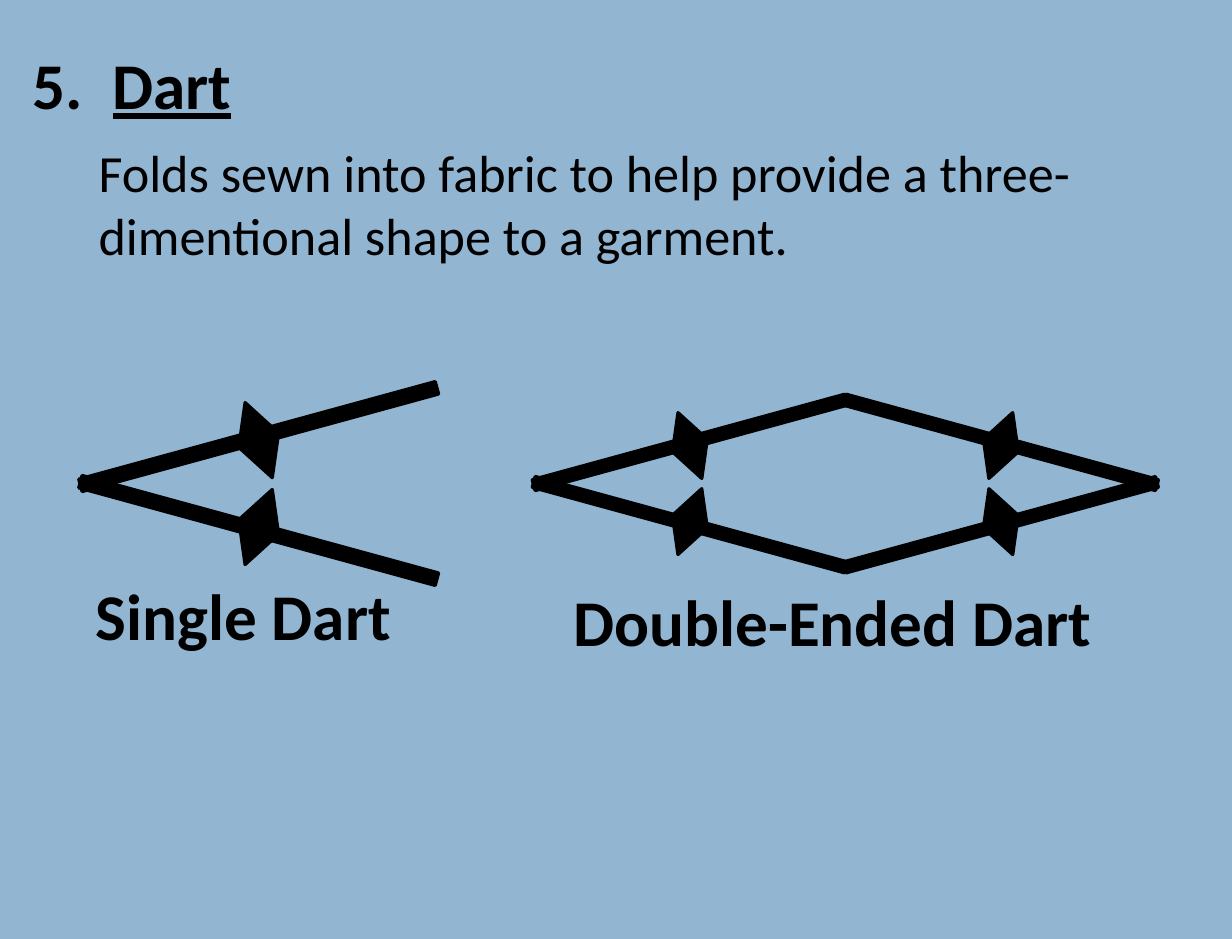
import dataclasses

import pptx
import pptx.dml.color
import pptx.enum.shapes
import pptx.enum.text
import pptx.util

Inches = pptx.util.Inches
SHAPES = pptx.enum.shapes.MSO_SHAPE


@dataclasses.dataclass(frozen=True)
class Theme:
    background = pptx.dml.color.RGBColor(0x92, 0xB5, 0xD2)
    ink = pptx.dml.color.RGBColor(0, 0, 0)
    font = "Calibri"
    heading_size = pptx.util.Pt(40)
    body_size = pptx.util.Pt(32)
    outline = pptx.util.Pt(2)


@dataclasses.dataclass(frozen=True)
class Box:
    left: float
    top: float
    width: float
    height: float

    @property
    def center(self):
        return self.left + self.width / 2, self.top + self.height / 2


THEME = Theme()


def place(shape, box):
    shape.left, shape.top = Inches(box.left), Inches(box.top)
    shape.width, shape.height = Inches(box.width), Inches(box.height)


def add_run(paragraph, text, size, bold=False, underline=False):
    run = paragraph.add_run()
    run.text = text
    run.font.name, run.font.size = THEME.font, size
    run.font.bold, run.font.underline = bold, underline
    run.font.color.rgb = THEME.ink


def prepare_text(shape, box, side_inset=0.1):
    """Place a text shape and return its first paragraph."""
    place(shape, box)
    frame = shape.text_frame
    frame.word_wrap = True
    frame.auto_size = pptx.enum.text.MSO_AUTO_SIZE.NONE
    frame.vertical_anchor = pptx.enum.text.MSO_ANCHOR.TOP
    frame.margin_left = frame.margin_right = Inches(side_inset)
    frame.margin_top = frame.margin_bottom = Inches(0.05)
    paragraph = frame.paragraphs[0]
    paragraph.alignment = pptx.enum.text.PP_ALIGN.LEFT
    return paragraph


def add_definition(slide, box):
    # Numbered term
    term = prepare_text(slide.shapes.title, Box(box.left, box.top, box.width, 0.78), 0.11)
    add_run(term, "5.  ", THEME.heading_size, bold=True)
    add_run(term, "Dart", THEME.heading_size, bold=True, underline=True)

    # Meaning, indented under the term
    indent, drop = 0.56, 0.82
    meaning_box = Box(box.left + indent, box.top + drop, box.width - indent, box.height - drop)
    meaning = prepare_text(slide.shapes.add_textbox(0, 0, 0, 0), meaning_box, 0.11)
    add_run(meaning, "Folds sewn into fabric to help provide a three- "
            "dimentional shape to a garment.", THEME.body_size)


def add_solid(slide, kind, center, size, rotation):
    (x, y), (width, height) = center, size
    solid = slide.shapes.add_shape(kind, 0, 0, 0, 0)
    place(solid, Box(x - width / 2, y - height / 2, width, height))
    solid.rotation = rotation % 360
    solid.shadow.inherit = False
    solid.fill.solid()
    solid.fill.fore_color.rgb = THEME.ink
    solid.line.color.rgb = THEME.ink
    solid.line.width = THEME.outline


def add_wedge(slide, box, direction=1):
    """Two notched seams meeting at the left (1) or the right (-1)."""
    x, y = box.center
    scale = box.width / 3.15
    for side in (-1, 1):
        turn = side * direction
        add_solid(slide, SHAPES.RECTANGLE, (x, y + side * 0.4 * scale),
                  (box.width, 0.11 * scale), turn * 15.3)
        add_solid(slide, SHAPES.DIAMOND, (x, y + side * 0.37 * scale),
                  (0.36 * scale, 0.68 * scale), turn * 19.9)


def add_label(slide, box, text):
    label = prepare_text(slide.shapes.add_textbox(0, 0, 0, 0), box)
    label.line_spacing = 0.9
    add_run(label, text, THEME.heading_size, bold=True)


def add_single_dart(slide, box):
    add_wedge(slide, Box(box.left, box.top, box.width, 1.64))
    add_label(slide, Box(box.left + 0.09, box.top + 1.63, 2.96, 0.9), "Single Dart")


def add_double_dart(slide, box):
    half = 2.76
    right_half = box.left + box.width - half
    add_wedge(slide, Box(box.left, box.top, half, 1.64))
    add_wedge(slide, Box(right_half, box.top, half, 1.64), direction=-1)
    add_label(slide, Box(box.left + 0.29, box.top + 1.68, 4.84, 0.77), "Double-Ended Dart")


def main():
    deck = pptx.Presentation()
    deck.slide_width, deck.slide_height = Inches(10.5), Inches(8)
    slide = deck.slides.add_slide(deck.slide_layouts[5])
    slide.background.fill.solid()
    slide.background.fill.fore_color.rgb = THEME.background

    add_definition(slide, Box(0.17, 0.33, 10.17, 2.5))
    add_single_dart(slide, Box(0.63, 3.3, 3.15, 2.53))
    add_double_dart(slide, Box(4.5, 3.3, 5.41, 2.45))
    deck.save("out.pptx")


if __name__ == "__main__":
    main()
